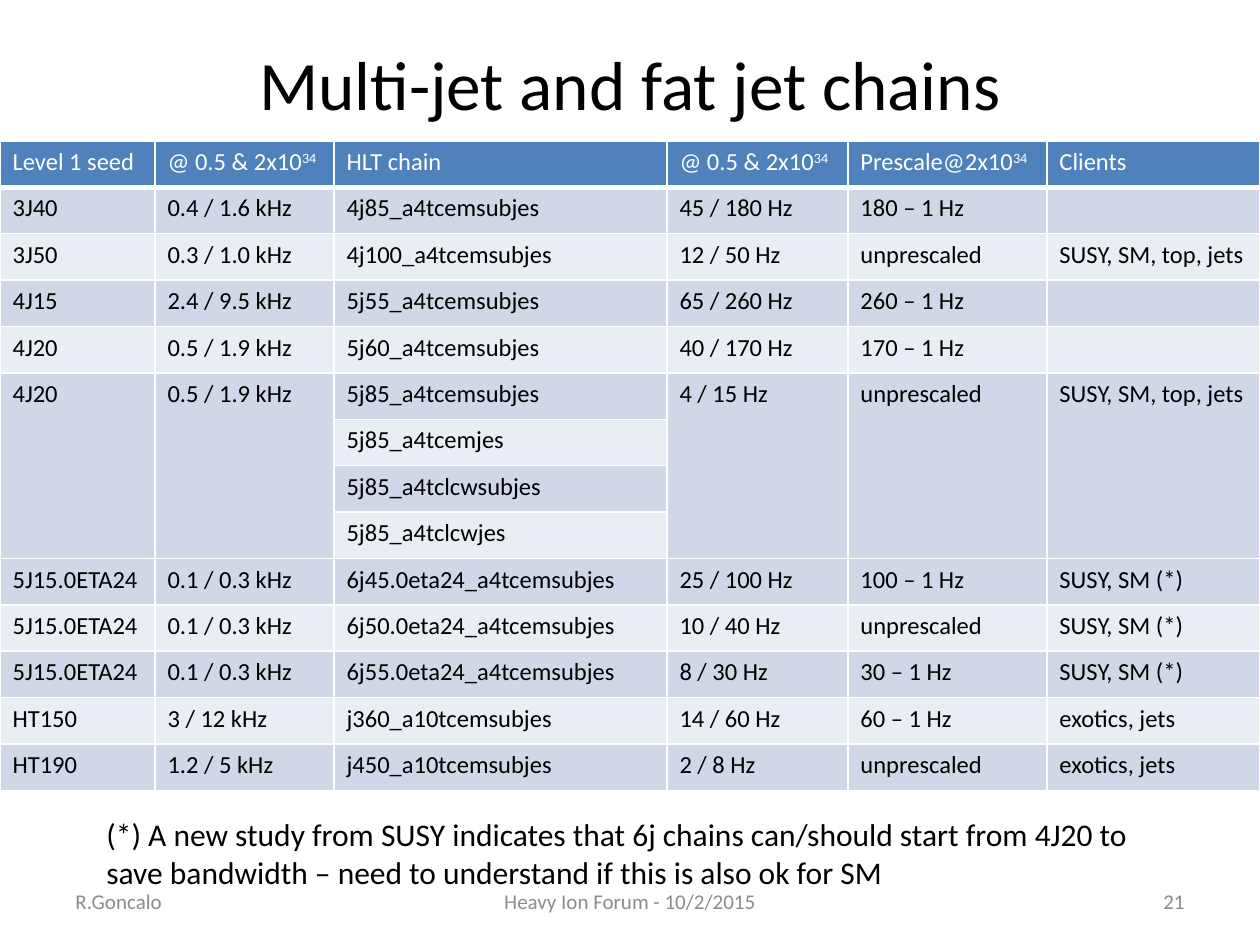
from lxml import etree
from pptx import Presentation, util as u
from pptx.dml.color import RGBColor
from pptx.enum import text as t
from pptx.oxml import ns

PX = 914400 / 126
BLACK = RGBColor(0x00, 0x00, 0x00)
WHITE = RGBColor(0xFF, 0xFF, 0xFF)
GREY = RGBColor(0x8C, 0x8C, 0x8C)
BLUE = RGBColor(0x4F, 0x81, 0xBD)
DARK = RGBColor(0xD0, 0xD8, 0xE8)
LIGHT = RGBColor(0xE9, 0xED, 0xF4)

LEFT, MID, RIGHT = t.PP_ALIGN.LEFT, t.PP_ALIGN.CENTER, t.PP_ALIGN.RIGHT
TOP, HALF = t.MSO_ANCHOR.TOP, t.MSO_ANCHOR.MIDDLE

COLS = [155, 179, 333, 181, 199, 213]
HEAD = ["Level 1 seed", "@ 0.5 & 2x10^34", "HLT chain",
        "@ 0.5 & 2x10^34", "Prescale@2x10^34", "Clients"]
ROWS = [
    ["3J40", "0.4 / 1.6 kHz", "4j85_a4tcemsubjes", "45 / 180 Hz", "180 – 1 Hz", ""],
    ["3J50", "0.3 / 1.0 kHz", "4j100_a4tcemsubjes", "12 / 50 Hz", "unprescaled", "SUSY, SM, top, jets"],
    ["4J15", "2.4 / 9.5 kHz", "5j55_a4tcemsubjes", "65 / 260 Hz", "260 – 1 Hz", ""],
    ["4J20", "0.5 / 1.9 kHz", "5j60_a4tcemsubjes", "40 / 170 Hz", "170 – 1 Hz", ""],
    ["4J20", "0.5 / 1.9 kHz", "5j85_a4tcemsubjes", "4 / 15 Hz", "unprescaled", "SUSY, SM, top, jets"],
    ["", "", "5j85_a4tcemjes", "", "", ""],
    ["", "", "5j85_a4tclcwsubjes", "", "", ""],
    ["", "", "5j85_a4tclcwjes", "", "", ""],
    ["5J15.0ETA24", "0.1 / 0.3 kHz", "6j45.0eta24_a4tcemsubjes", "25 / 100 Hz", "100 – 1 Hz", "SUSY, SM (*)"],
    ["5J15.0ETA24", "0.1 / 0.3 kHz", "6j50.0eta24_a4tcemsubjes", "10 / 40 Hz", "unprescaled", "SUSY, SM (*)"],
    ["5J15.0ETA24", "0.1 / 0.3 kHz", "6j55.0eta24_a4tcemsubjes", "8 / 30 Hz", "30 – 1 Hz", "SUSY, SM (*)"],
    ["HT150", "3 / 12 kHz", "j360_a10tcemsubjes", "14 / 60 Hz", "60 – 1 Hz", "exotics, jets"],
    ["HT190", "1.2 / 5 kHz", "j450_a10tcemsubjes", "2 / 8 Hz", "unprescaled", "exotics, jets"],
]
SPAN_TOP, SPAN_END = 5, 8
SPAN_COLS = [0, 1, 3, 4, 5]


def px(n):
    return u.Emu(round(n * PX))


def style(obj, vals):
    for key, val in vals.items():
        setattr(obj, key, val)


def font(run, size, color):
    style(run.font, {"name": "Calibri", "size": u.Pt(size), "bold": False})
    run.font.color.rgb = color


def label(slide, box, words, size, color, align=LEFT, anchor=HALF):
    frame = slide.shapes.add_textbox(*map(px, box)).text_frame
    style(frame, {"word_wrap": True, "vertical_anchor": anchor})
    para = frame.paragraphs[0]
    para.alignment = align
    run = para.add_run()
    run.text = words
    font(run, size, color)


def edges(cell, base):
    props = cell._tc.get_or_add_tcPr()
    widths = {"lnL": 1, "lnR": 1, "lnT": 1, "lnB": base}
    for spot, (tag, wide) in enumerate(widths.items()):
        line = etree.Element(ns.qn("a:" + tag), w=str(u.Pt(wide)))
        fill = etree.SubElement(line, ns.qn("a:solidFill"))
        etree.SubElement(fill, ns.qn("a:srgbClr"), val=str(WHITE))
        props.insert(spot, line)


def fill_cell(cell, words, back, color, base):
    cell.fill.solid()
    cell.fill.fore_color.rgb = back
    edges(cell, base)
    para = cell.text_frame.paragraphs[0]
    if not words:
        etree.SubElement(para._p, ns.qn("a:endParaRPr"), sz="1400")
        return
    for part, raised in zip(words.split("^"), (False, True)):
        run = para.add_run()
        run.text = part
        font(run, 14, color)
        if raised:
            run.font._element.set("baseline", "30000")


def chains(slide, box):
    data = [HEAD] + ROWS
    grid = slide.shapes.add_table(len(data), len(COLS), *map(px, box)).table
    for col, wide in zip(grid.columns, COLS):
        col.width = px(wide)
    for r, line in enumerate(data):
        grid.rows[r].height = px(box[3] / len(data))
        back = DARK if r % 2 else LIGHT
        look = (back, BLACK, 1) if r else (BLUE, WHITE, 3)
        for c, words in enumerate(line):
            fill_cell(grid.cell(r, c), words, *look)
    for c in SPAN_COLS:
        grid.cell(SPAN_TOP, c).merge(grid.cell(SPAN_END, c))


def footer(slide, box):
    x, y, w, h = box
    side, mid = 294, 400
    label(slide, (x, y, side, h), "R.Goncalo", 12, GREY)
    label(slide, (x + (w - mid) // 2, y, mid, h),
          "Heavy Ion Forum - 10/2/2015", 12, GREY, MID)
    label(slide, (x + w - side, y, side, h), "21", 12, GREY, RIGHT)


def main():
    deck = Presentation()
    style(deck, {"slide_width": px(1260), "slide_height": px(945)})
    slide = deck.slides.add_slide(deck.slide_layouts[6])
    label(slide, (63, 38, 1134, 90), "Multi-jet and fat jet chains", 39.6, BLACK, MID)
    chains(slide, (0, 141, 1260, 650))
    label(slide, (94, 809, 1082, 89),
          "(*) A new study from SUSY indicates that 6j chains can/should start "
          "from 4J20 to save bandwidth – need to understand if this is also ok for SM",
          18, BLACK, anchor=TOP)
    footer(slide, (63, 876, 1134, 50))
    deck.save("out.pptx")


if __name__ == "__main__":
    main()
